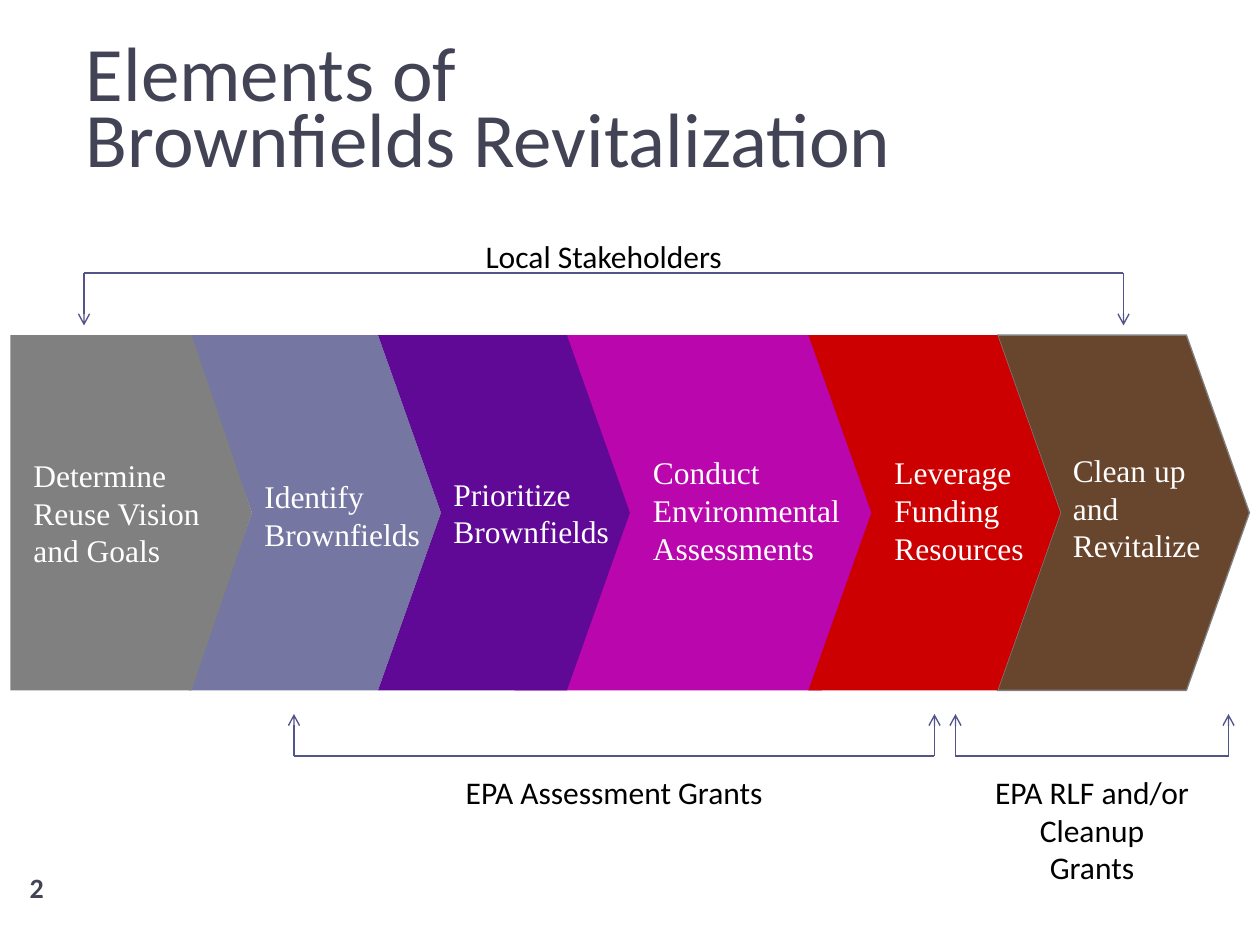
from dataclasses import dataclass
from typing import NamedTuple

from lxml import etree
from pptx import Presentation
from pptx.dml import color
from pptx.enum import shapes, text
from pptx.oxml import ns
from pptx.util import Pt


@dataclass(frozen=True)
class Theme:
    head: str = "424456"
    rule: str = "53548A"
    ink: str = "000000"
    light: str = "FFFFFF"
    edge: str = "808080"
    sans: str = "Calibri"
    serif: str = "Times New Roman"
    title: int = 44
    body: int = 18
    page: int = 16


class Step(NamedTuple):
    left: float
    width: float
    fill: str
    adj: float = 0.25
    kind: int = shapes.MSO_SHAPE.CHEVRON
    alpha: int = 100
    edge: str = ""


class Label(NamedTuple):
    words: str
    left: float
    top: float
    width: float
    height: float


class Span(NamedTuple):
    left: float
    right: float
    bar: float
    tip: float


T = Theme()
TOP, HIGH = 191.5, 203

# Steps from back to front
STEPS = [
    Step(570, 144, "68462E", edge=T.edge),
    Step(294, 234, "BA06AD", adj=0.288),
    Step(216, 144, "610997"),
    Step(108, 144, T.rule, alpha=80),
    Step(6, 138, "808080", kind=shapes.MSO_SHAPE.PENTAGON),
    Step(462, 144, "CC0000"),
]
NAMES = [
    Label("Determine Reuse Vision and Goals", 12, 256.5, 120, 72.7),
    Label("Identify\nBrownfields", 144, 268.6, 114, 50.9),
    Label("Prioritize\nBrownfields", 252, 267.4, 132, 50.9),
    Label("Conduct\nEnvironmental\nAssessments", 366, 255, 132, 72.7),
    Label("Clean up and Revitalize", 606, 253.6, 100, 72.7),
    Label("Leverage Funding Resources", 504, 255, 96, 72.7),
]
SPANS = [
    Span(48, 642, 156, 186),
    Span(168, 534, 432, 408),
    Span(546, 702, 432, 408),
]
NOTES = [
    Label("Local Stakeholders", 48, 132, 594, 29),
    Label("EPA Assessment Grants", 168, 438, 366, 29),
    Label("EPA RLF and/or\nCleanup\nGrants", 546, 438, 156, 72.7),
]


def rgb(code: str) -> color.RGBColor:
    return color.RGBColor.from_string(code)


def add_step(slide, step: Step) -> None:
    shape = slide.shapes.add_shape(
        step.kind, Pt(step.left), Pt(TOP), Pt(step.width), Pt(HIGH))
    shape.adjustments[0] = step.adj
    shape.shadow.inherit = False
    shape.fill.solid()
    shape.fill.fore_color.rgb = rgb(step.fill)
    if step.alpha < 100:
        tint = shape.fill._xPr.find(".//" + ns.qn("a:srgbClr"))
        etree.SubElement(tint, ns.qn("a:alpha"), val=str(step.alpha * 1000))
    if step.edge:
        shape.line.color.rgb = rgb(step.edge)
        shape.line.width = Pt(0.75)
    else:
        shape.line.fill.background()


def add_text(slide, label: Label, face: str, size: int, ink: str,
             mid: bool = True, align=text.PP_ALIGN.LEFT,
             grow: bool = True, bold: bool = False, lead: float = 0) -> None:
    box = slide.shapes.add_textbox(*map(Pt, label[1:]))
    frame = box.text_frame
    frame.word_wrap = True
    if grow:
        frame.auto_size = text.MSO_AUTO_SIZE.SHAPE_TO_FIT_TEXT
    frame.vertical_anchor = (
        text.MSO_ANCHOR.MIDDLE if mid else text.MSO_ANCHOR.TOP)
    frame.text = label.words
    for para in frame.paragraphs:
        para.alignment = align
        if lead:
            para.line_spacing = Pt(lead)
        font = para.font
        font.name, font.size, font.bold = face, Pt(size), bold
        font.color.rgb = rgb(ink)


def add_line(slide, x1: float, y1: float, x2: float, y2: float,
             head: bool = False) -> None:
    line = slide.shapes.add_connector(
        shapes.MSO_CONNECTOR.STRAIGHT, Pt(x1), Pt(y1), Pt(x2), Pt(y2))
    line.line.color.rgb = rgb(T.rule)
    line.line.width = Pt(0.79)
    if head:
        etree.SubElement(line.line._ln, ns.qn("a:tailEnd"), type="arrow")
    etree.SubElement(line._element.spPr, ns.qn("a:effectLst"))


def add_span(slide, span: Span) -> None:
    add_line(slide, span.left, span.bar, span.right, span.bar)
    for x in (span.left, span.right):
        add_line(slide, x, span.bar, x, span.tip, head=True)


def main() -> None:
    deck = Presentation()
    deck.slide_width, deck.slide_height = Pt(720), Pt(540)
    slide = deck.slides.add_slide(deck.slide_layouts[6])

    # Page number and title
    add_text(slide, Label("2", 0, 492, 42, 30), T.sans, T.page, T.head,
             align=text.PP_ALIGN.CENTER, grow=False, bold=True)
    add_text(slide, Label("Elements of\vBrownfields Revitalization",
                          42, 21.6, 660, 90),
             T.sans, T.title, T.head, grow=False, lead=38)

    # Process steps and their names
    for step in STEPS:
        add_step(slide, step)
    for name in NAMES:
        add_text(slide, name, T.serif, T.body, T.light)

    # Brackets and their notes
    for span in SPANS:
        add_span(slide, span)
    for note in NOTES:
        add_text(slide, note, T.sans, T.body, T.ink, mid=False,
                 align=text.PP_ALIGN.CENTER)

    deck.save("out.pptx")


if __name__ == "__main__":
    main()
